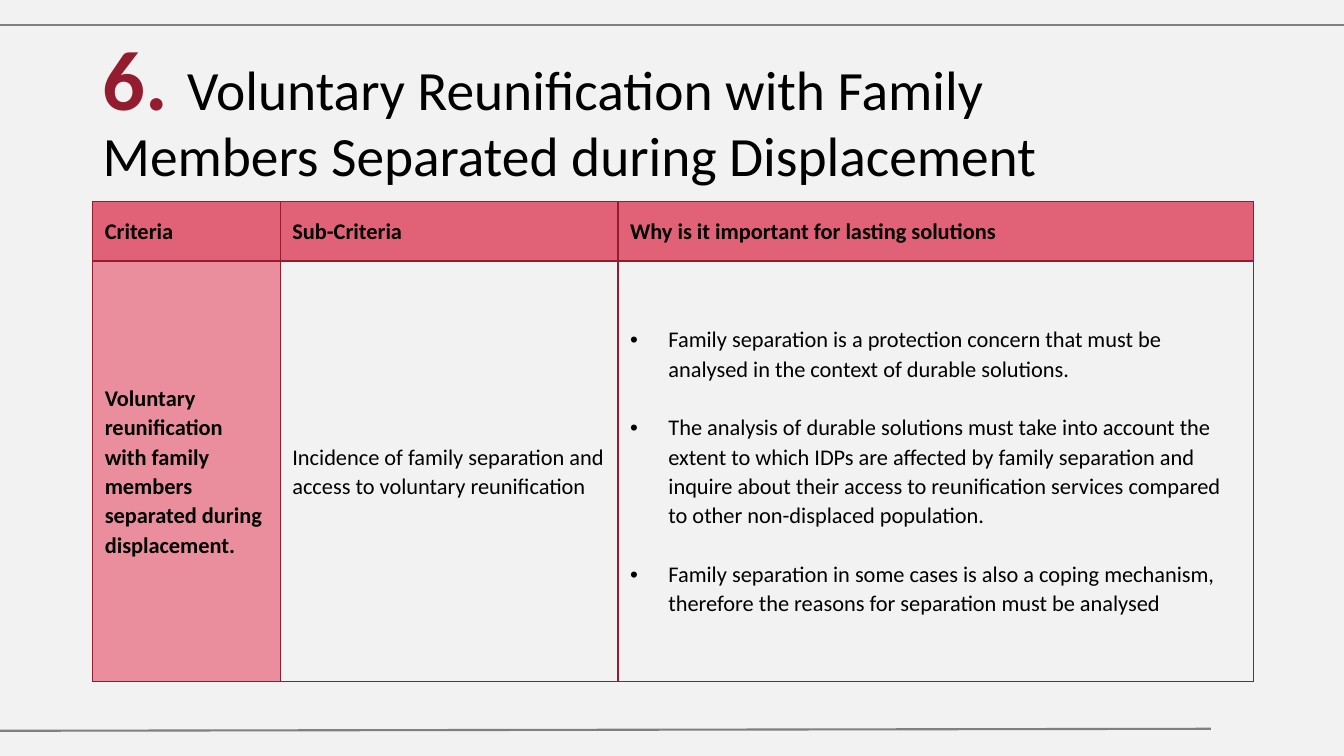
from lxml.etree import SubElement
from pptx import Presentation
from pptx.dml.color import RGBColor
from pptx.enum.shapes import MSO_CONNECTOR
from pptx.enum.text import MSO_ANCHOR
from pptx.oxml import parse_xml
from pptx.oxml.ns import nsdecls, qn
from pptx.util import Pt

EMU_PER_PX = 9144  # 100 px to the inch
FONT = "Calibri"
PAPER = RGBColor(0xF2, 0xF2, 0xF2)
GREY = RGBColor(0x80, 0x80, 0x80)
BLACK = RGBColor(0x00, 0x00, 0x00)
CRIMSON = RGBColor(0x94, 0x1C, 0x2F)
ROSE = RGBColor(0xE1, 0x61, 0x76)
PINK = RGBColor(0xEA, 0x8E, 0x9D)

HEADINGS = ["Criteria", "Sub-Criteria", "Why is it important for lasting solutions"]
CRITERION = "Voluntary reunification with family members separated during displacement."
SUB_CRITERION = "Incidence of family separation and access to voluntary reunification"
REASONS = [
    "Family separation is a protection concern that must be analysed in the context "
    "of durable solutions.",
    "The analysis of durable solutions must take into account the extent to which IDPs "
    "are affected by family separation and inquire about their access to reunification "
    "services compared to other non-displaced population.",
    "Family separation in some cases is also a coping mechanism, therefore the reasons "
    "for separation must be analysed",
]


def px(length):
    return round(length * EMU_PER_PX)


def add_span(para, text, size, color=BLACK, bold=False):
    span = para.add_run()
    span.text = text
    span.font.name = FONT
    span.font.size = Pt(size)
    span.font.bold = bold
    span.font.color.rgb = color


def add_rule(page, start, end):
    rule = page.shapes.add_connector(MSO_CONNECTOR.STRAIGHT, *map(px, start + end))
    rule.line.color.rgb = GREY
    rule.line.width = Pt(1.5)
    SubElement(rule._element.spPr, qn("a:effectLst"))


def add_title(page, left, top, width, height):
    box = page.shapes.add_textbox(px(left), px(top), px(width), px(height))
    frame = box.text_frame
    frame.word_wrap = True
    frame.vertical_anchor = MSO_ANCHOR.MIDDLE
    para = frame.paragraphs[0]
    para.line_spacing = 0.9
    add_span(para, "6. ", 60.3, CRIMSON, bold=True)
    add_span(
        para,
        "Voluntary Reunification with Family Members Separated during Displacement",
        39.6,
    )


def add_borders(cell):
    properties = cell._tc.get_or_add_tcPr()
    for index, side in enumerate(("lnL", "lnR", "lnT", "lnB")):
        border = parse_xml(
            f'<a:{side} {nsdecls("a")} w="{Pt(1)}"><a:solidFill>'
            f'<a:srgbClr val="{CRIMSON}"/></a:solidFill></a:{side}>'
        )
        properties.insert(index, border)


def add_bullet(para):
    properties = para._p.get_or_add_pPr()
    properties.set("marL", str(px(38)))
    properties.set("indent", str(px(-38)))
    SubElement(properties, qn("a:buFont"), typeface="Arial")
    SubElement(properties, qn("a:buChar"), char="•")


def fill_cell(cell, texts, fill=None, bold=False, bulleted=False):
    if fill is None:
        cell.fill.background()
    else:
        cell.fill.solid()
        cell.fill.fore_color.rgb = fill
    add_borders(cell)
    cell.vertical_anchor = MSO_ANCHOR.MIDDLE
    cell.margin_left = cell.margin_right = px(12)
    cell.margin_top = cell.margin_bottom = px(8)
    frame = cell.text_frame
    for index, text in enumerate(texts):
        para = frame.add_paragraph() if index else frame.paragraphs[0]
        para.line_spacing = 1.07
        if index:
            para.space_before = Pt(21)
        if bulleted:
            add_bullet(para)
        else:
            para.space_after = Pt(8)
        add_span(para, text, 16, bold=bold)


def add_criteria_table(page, left, top, widths, heights):
    table = page.shapes.add_table(
        len(heights), len(widths), px(left), px(top), px(sum(widths)), px(sum(heights))
    ).table
    table.first_row = table.horz_banding = False
    for column, width in zip(table.columns, widths):
        column.width = px(width)
    for row, height in zip(table.rows, heights):
        row.height = px(height)
    for index, heading in enumerate(HEADINGS):
        fill_cell(table.cell(0, index), [heading], ROSE, bold=True)
    fill_cell(table.cell(1, 0), [CRITERION], PINK, bold=True)
    fill_cell(table.cell(1, 1), [SUB_CRITERION])
    fill_cell(table.cell(1, 2), REASONS, bulleted=True)


def main():
    deck = Presentation()
    deck.slide_width, deck.slide_height = px(1333), px(750)
    page = deck.slides.add_slide(deck.slide_layouts[6])
    page.background.fill.solid()
    page.background.fill.fore_color.rgb = PAPER
    add_rule(page, (0, 25), (1333, 25))
    add_rule(page, (0, 725), (1201, 723))
    add_title(page, 92, 40, 1048, 145)
    add_criteria_table(page, 92, 200, (186, 335, 630), (59, 417))
    deck.save("out.pptx")


if __name__ == "__main__":
    main()
